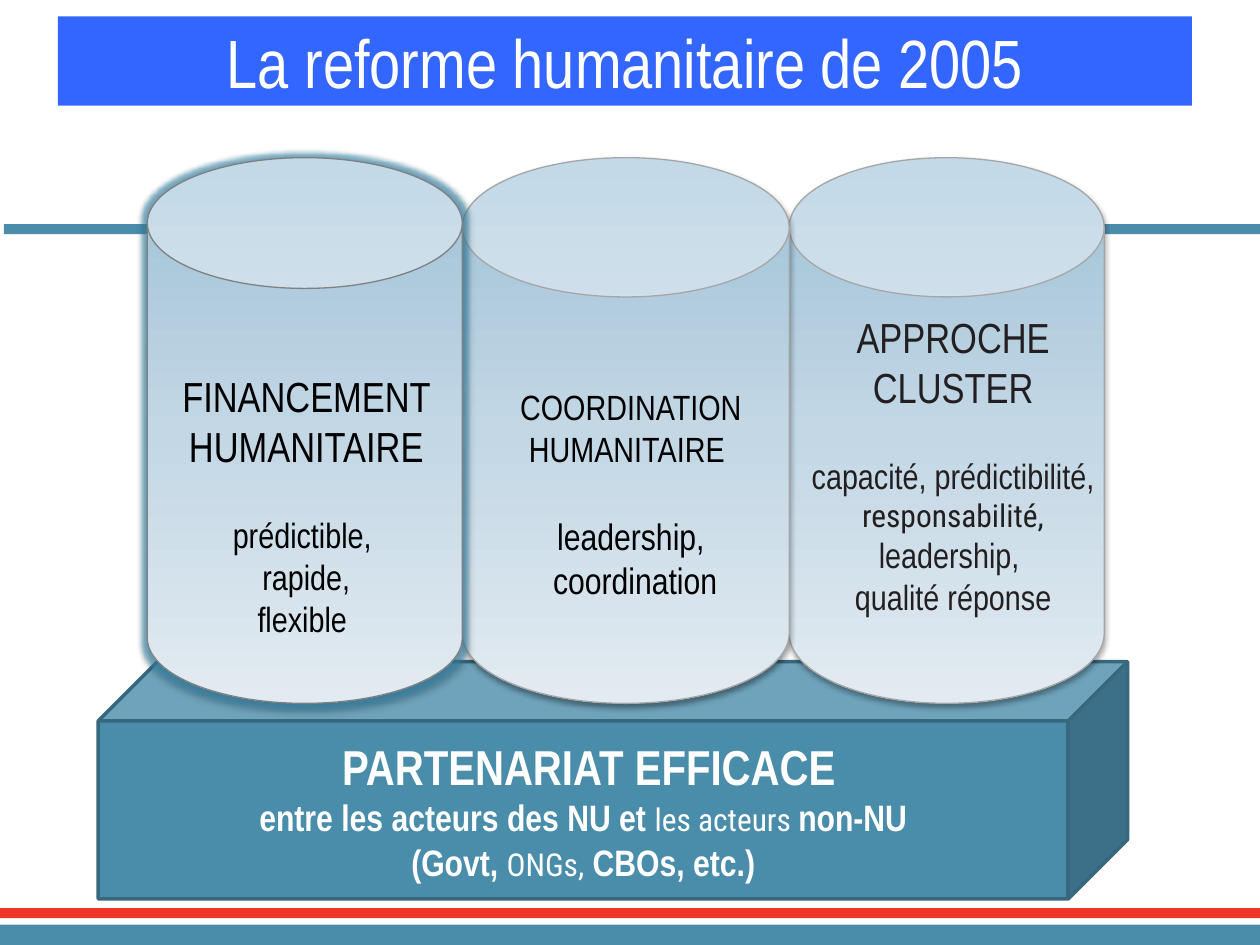
from copy import deepcopy
from dataclasses import dataclass

from lxml import etree
from pptx import Presentation
from pptx.dml.color import RGBColor
from pptx.enum.shapes import MSO_SHAPE
from pptx.enum.text import MSO_ANCHOR, PP_ALIGN
from pptx.oxml.ns import qn
from pptx.util import Cm, Pt

RECT, CUBE, CAN = MSO_SHAPE.RECTANGLE, MSO_SHAPE.CUBE, MSO_SHAPE.CAN
CENTER, TOP, MIDDLE = PP_ALIGN.CENTER, MSO_ANCHOR.TOP, MSO_ANCHOR.MIDDLE


@dataclass(frozen=True)
class Theme:
    teal: str = "4A8DAA"
    edge: str = "37687E"
    red: str = "EE3528"
    blue: str = "3366FF"
    glow: str = "3A8BB0"
    white: str = "FFFFFF"
    black: str = "000000"
    ink: str = "231F20"
    grey: str = "A6A6A6"
    dark: str = "808080"
    fade: tuple = ((0, "9CC1D7"), (0.5, "C3D7E5"), (1, "E2EBF1"))
    main: str = "Arial Narrow"
    alt: str = "Roboto Condensed"
    title: int = 39
    base: int = 28
    head: int = 24
    body: int = 21
    small: int = 20
    note: int = 18


T = Theme()

# Content: a paragraph is (size, space before, runs); a run in a tuple uses the alt font
TITLE = [(T.title, 0, ["La reforme humanitaire de 2005"])]
BASE = [
    (T.base, 0, [" PARTENARIAT EFFICACE"]),
    (T.body, 0, ["entre les acteurs des NU et ", ("les acteurs ",), "non-NU"]),
    (T.body, 0, ["(Govt, ", ("ONGs,",), " CBOs, etc.)"]),
]
MONEY = [
    (T.head, 0, ["FINANCEMENT HUMANITAIRE"]),
    (T.small, 24, ["prédictible, "]),
    (T.small, 0, ["rapide,"]),
    (T.small, 0, ["flexible "]),
]
COORD = [
    (T.small, 0, ["COORDINATION"]),
    (T.small, 0, ["HUMANITAIRE "]),
    (T.body, 25, ["leadership,"]),
    (T.body, 0, [" coordination"]),
]
CLUSTER = [
    (T.head, 0, ["APPROCHE CLUSTER"]),
    (T.small, 24, ["capacité, prédictibilité, ", ("responsabilité, ",), "leadership, "]),
    (T.small, 0, [" qualité réponse "]),
]

# Places in cm: left, top, width, height
BARS = [
    ((0.08, 4.52, 25.32, 0.2), T.teal),
    ((0, 18.64, 25.4, 0.41), T.teal),
    ((0, 18.31, 25.4, 0.2), T.red),
]
# Pillars from left to right: width, rim, line, shadow opacity, glow, text, colour, text place
PILLARS = [
    (6.35, 0.415, T.dark, 38, True, MONEY, T.black, (2.44, 7.34, 7.47, 7.44)),
    (6.59, 0.426, T.grey, 38, False, COORD, T.black, (9.53, 7.65, 6.38, 4.65)),
    (6.35, 0.442, T.grey, 35, False, CLUSTER, T.ink, (15.75, 6.15, 6.93, 7.44)),
]
LEFT, ROOF, TALL = 2.97, 3.18, 11


def rgb(code):
    return RGBColor.from_string(code)


def place(box):
    return [Cm(v) for v in box]


def shape(kind, box, fill=None, line=None, width=0.75):
    item = slide.shapes.add_shape(kind, *place(box))
    item.shadow.inherit = False
    if fill:
        item.fill.solid()
        item.fill.fore_color.rgb = rgb(fill)
    if line:
        item.line.color.rgb = rgb(line)
        item.line.width = Pt(width)
    else:
        item.line.fill.background()
    return item


def write(item, paras, color, bold=False, anchor=TOP, wrap=True):
    frame = item.text_frame
    frame.word_wrap = wrap
    frame.vertical_anchor = anchor
    for i, (size, gap, runs) in enumerate(paras):
        para = frame.add_paragraph() if i else frame.paragraphs[0]
        para.alignment = CENTER
        para.space_before = Pt(gap)
        para.font.name, para.font.size = T.main, Pt(size)
        para.font.bold = bold
        para.font.color.rgb = rgb(color)
        for part in runs:
            run = para.add_run()
            run.text = part if isinstance(part, str) else part[0]
            if not isinstance(part, str):
                run.font.name, run.font.size = T.alt, Pt(T.note)
                run.font.bold = False


def shade(item):
    item.fill.gradient()
    item.fill.gradient_angle = 270
    stops = item.element.spPr.find(qn("a:gradFill")).find(qn("a:gsLst"))
    stops.append(deepcopy(stops[-1]))
    for stop, (spot, code) in zip(item.fill.gradient_stops, T.fade):
        stop.position = spot
        stop.color.rgb = rgb(code)


def effect(item, tag, code, alpha, **attrs):
    group = item.element.spPr.find(qn("a:effectLst"))
    node = etree.SubElement(group, qn(tag), {k: str(v) for k, v in attrs.items()})
    tint = etree.SubElement(node, qn("a:srgbClr"), val=code)
    etree.SubElement(tint, qn("a:alpha"), val=str(alpha * 1000))


prs = Presentation()
prs.slide_width, prs.slide_height = Cm(25.4), Cm(19.05)
slide = prs.slides.add_slide(prs.slide_layouts[6])

# Bars and title
for box, fill in BARS:
    shape(RECT, box, fill)
title = shape(RECT, (1.17, 0.33, 22.86, 1.8), T.blue)
write(title, TITLE, T.white, anchor=MIDDLE, wrap=False)

# Base block
base = shape(CUBE, (1.98, 13.34, 20.75, 4.78), T.teal, T.edge, 2)
base.adjustments[0] = 0.25
write(base, BASE, T.white, bold=True, anchor=MIDDLE, wrap=False)

# Pillars, the left one in front
for i in reversed(range(len(PILLARS))):
    wide, rim, line, alpha, glow = PILLARS[i][:5]
    left = LEFT + sum(p[0] for p in PILLARS[:i])
    can = shape(CAN, (left, ROOF, wide, TALL), line=line)
    can.adjustments[0] = rim
    shade(can)
    if glow:
        effect(can, "a:glow", T.glow, 60, rad=Pt(5))
    effect(can, "a:outerShdw", T.black, alpha, blurRad=Pt(3.1), dist=Pt(1.6),
           dir=5400000, rotWithShape=0)

# Pillar texts
for *_, paras, color, box in PILLARS:
    write(slide.shapes.add_textbox(*place(box)), paras, color)

prs.save("out.pptx")
